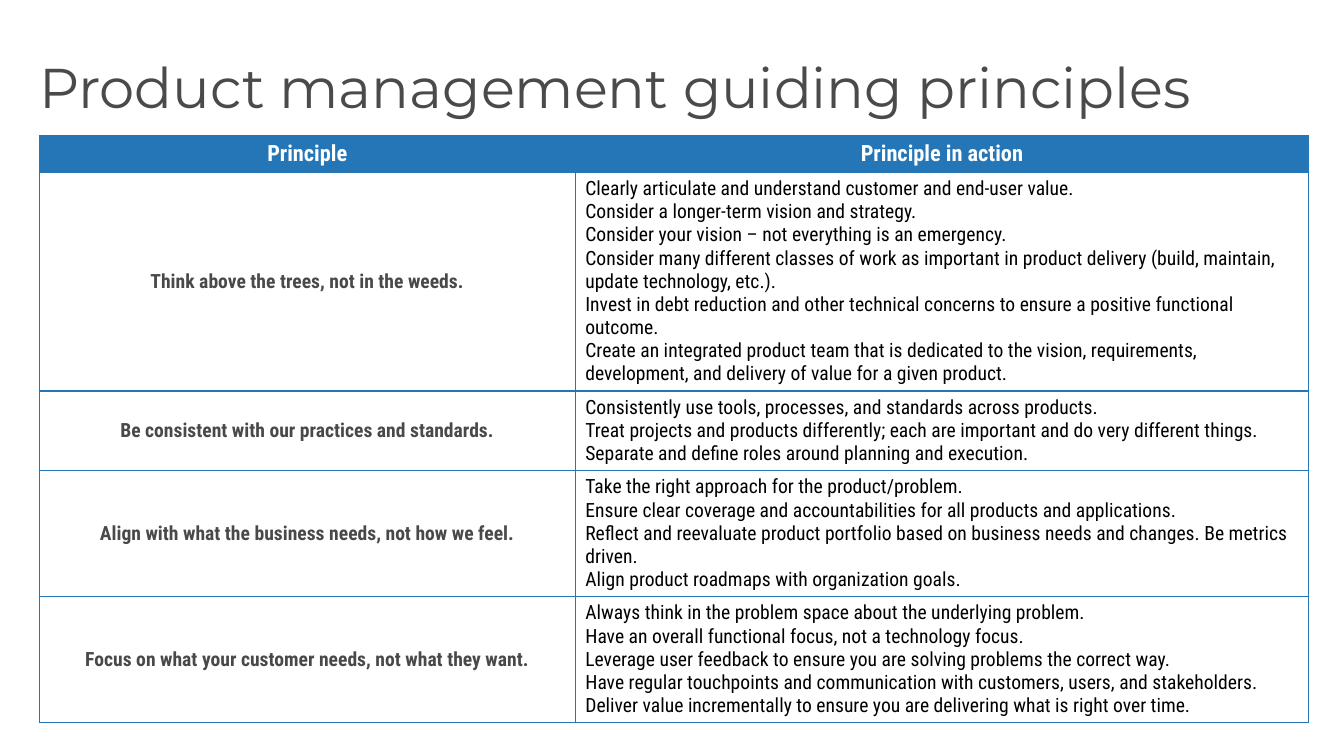
from dataclasses import dataclass

from lxml.etree import SubElement
from pptx import Presentation
from pptx.dml.color import RGBColor
from pptx.enum.text import MSO_ANCHOR as Anchor, PP_ALIGN as Align
from pptx.oxml.ns import qn
from pptx.util import Inches, Pt


@dataclass(frozen=True)
class Theme:
    title_font: str = "Montserrat"
    table_font: str = "Roboto Condensed"
    title_size: int = 40
    header_size: int = 16
    body_size: int = 14
    blue: str = "2576B7"
    white: str = "FFFFFF"
    black: str = "000000"
    title_gray: str = "4A4A4A"
    principle_gray: str = "494949"


THEME = Theme()
LEFT, WIDTH = 0.39, 12.6
TABLE_TOP, TABLE_HEIGHT = 1.35, 5.67
COLUMN_WIDTHS = (5.32, 7.28)
HEADER_HEIGHT, MINIMUM_ROW_HEIGHT = 0.24, 0.33  # rows grow to fit their text
HEADINGS = ("Principle", "Principle in action")

PRINCIPLES = {
    "Think above the trees, not in the weeds.": [
        "Clearly articulate and understand customer and end-user value.",
        "Consider a longer-term vision and strategy.",
        "Consider your vision – not everything is an emergency.",
        "Consider many different classes of work as important in product delivery "
        "(build, maintain, update technology, etc.).",
        "Invest in debt reduction and other technical concerns to ensure a positive "
        "functional outcome.",
        "Create an integrated product team that is dedicated to the vision, requirements, "
        "development, and delivery of value for a given product.",
    ],
    "Be consistent with our practices and standards.": [
        "Consistently use tools, processes, and standards across products.",
        "Treat projects and products differently; each are important and do very "
        "different things.",
        "Separate and define roles around planning and execution.",
    ],
    "Align with what the business needs, not how we feel.": [
        "Take the right approach for the product/problem.",
        "Ensure clear coverage and accountabilities for all products and applications.",
        "Reflect and reevaluate product portfolio based on business needs and changes. "
        "Be metrics driven.",
        "Align product roadmaps with organization goals.",
    ],
    "Focus on what your customer needs, not what they want.": [
        "Always think in the problem space about the underlying problem.",
        "Have an overall functional focus, not a technology focus.",
        "Leverage user feedback to ensure you are solving problems the correct way.",
        "Have regular touchpoints and communication with customers, users, and stakeholders.",
        "Deliver value incrementally to ensure you are delivering what is right over time.",
    ],
}


def format_paragraph(paragraph, font_name, size, color, bold=False, align=Align.LEFT):
    paragraph.alignment = align
    font = paragraph.font
    font.name, font.size, font.bold = font_name, Pt(size), bold
    font.color.rgb = RGBColor.from_string(color)


def clear_margins(box):
    box.margin_left = box.margin_top = box.margin_right = box.margin_bottom = 0


def add_title(slide, text):
    title = slide.shapes.title
    title.left, title.top = Inches(LEFT), Inches(0.6)
    title.width, title.height = Inches(WIDTH), Inches(1.24)
    frame = title.text_frame
    clear_margins(frame)
    frame.word_wrap = True
    frame.vertical_anchor = Anchor.TOP
    frame.text = text
    paragraph = frame.paragraphs[0]
    paragraph.line_spacing = 0.9
    format_paragraph(paragraph, THEME.title_font, THEME.title_size, THEME.title_gray)


def add_borders(cell):
    properties = cell._tc.get_or_add_tcPr()
    for side in ("L", "R", "T", "B"):
        line = SubElement(properties, qn(f"a:ln{side}"), w=str(Pt(1)), cmpd="sng")
        fill = SubElement(line, qn("a:solidFill"))
        SubElement(fill, qn("a:srgbClr"), val=THEME.blue)
        SubElement(line, qn("a:prstDash"), val="solid")


def fill_cell(cell, lines, fill, size, color, bold=False, centered=False):
    add_borders(cell)
    cell.fill.solid()
    cell.fill.fore_color.rgb = RGBColor.from_string(fill)
    cell.vertical_anchor = Anchor.MIDDLE if centered else Anchor.TOP
    cell.text = "\n".join(lines)
    align = Align.CENTER if centered else Align.LEFT
    for paragraph in cell.text_frame.paragraphs:
        format_paragraph(paragraph, THEME.table_font, size, color, bold, align)


def add_principles_table(slide):
    frame = slide.shapes.add_table(
        len(PRINCIPLES) + 1, len(COLUMN_WIDTHS), Inches(LEFT), Inches(TABLE_TOP),
        Inches(WIDTH), Inches(TABLE_HEIGHT))
    table = frame.table
    table.horz_banding = False
    for column, width in zip(table.columns, COLUMN_WIDTHS):
        column.width = Inches(width)
    for row in table.rows:
        row.height = Inches(MINIMUM_ROW_HEIGHT)
    table.rows[0].height = Inches(HEADER_HEIGHT)
    frame.height = Inches(TABLE_HEIGHT)

    for index, heading in enumerate(HEADINGS):
        fill_cell(table.cell(0, index), [heading], THEME.blue, THEME.header_size,
                  THEME.white, bold=True, centered=True)
    for index, (principle, actions) in enumerate(PRINCIPLES.items(), start=1):
        principle_cell = table.cell(index, 0)
        clear_margins(principle_cell)
        fill_cell(principle_cell, [principle], THEME.white, THEME.body_size,
                  THEME.principle_gray, bold=True, centered=True)
        fill_cell(table.cell(index, 1), actions, THEME.white, THEME.body_size, THEME.black)


def main():
    presentation = Presentation()
    presentation.slide_width, presentation.slide_height = Inches(13.34), Inches(7.5)
    slide = presentation.slides.add_slide(presentation.slide_layouts.get_by_name("Title Only"))
    add_title(slide, "Product management guiding principles")
    add_principles_table(slide)
    presentation.save("out.pptx")


if __name__ == "__main__":
    main()
